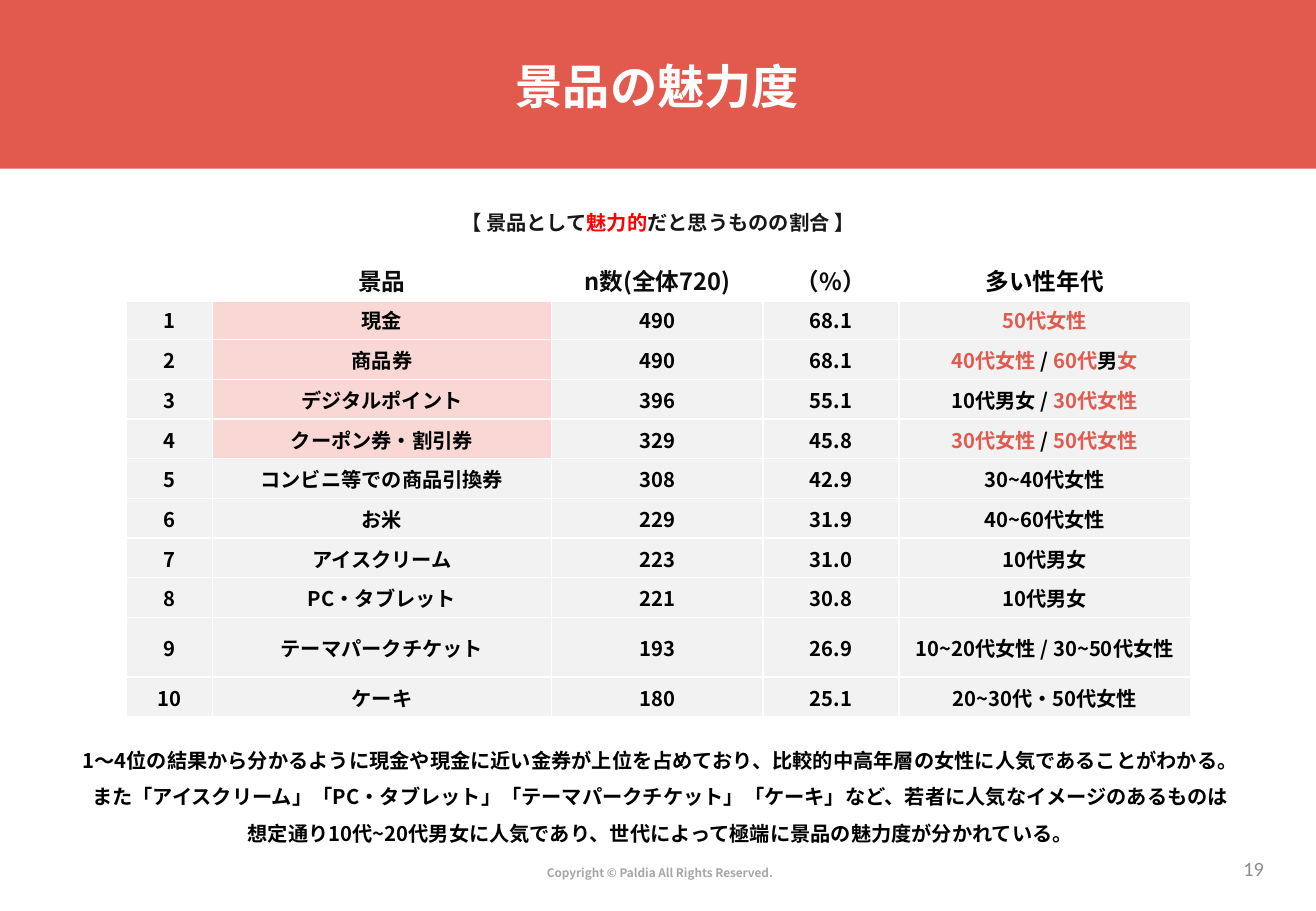
from dataclasses import dataclass

from lxml import etree
from pptx import Presentation
from pptx import util as u
from pptx.dml.color import RGBColor
from pptx.enum import shapes, text
from pptx.oxml import ns


@dataclass(frozen=True)
class Theme:
    font: str = "Noto Sans CJK JP"
    number_font: str = "Calibri"
    coral: str = "E25A4E"
    pink: str = "F8D7D4"
    grey: str = "F2F2F2"
    white: str = "FFFFFF"
    black: str = "000000"
    ink: str = "0D0D0D"
    caption: str = "181717"
    red: str = "FF0000"
    footer: str = "A6A6A6"
    number: str = "8C8C8C"
    title_size: float = 28
    header_size: float = 14
    body_size: float = 12
    footer_size: float = 7


CENTER = text.PP_ALIGN.CENTER
MIDDLE = text.MSO_ANCHOR.MIDDLE
GROW = text.MSO_AUTO_SIZE.SHAPE_TO_FIT_TEXT

HEADER = ["", "景品", "n数(全体720)", "（%）", "|多い性年代"]
PRIZES = [
    ("現金", "490", "68.1", "|50代女性"),
    ("商品券", "490", "68.1", "|40代女性 |/ |60代|男|女"),
    ("デジタルポイント", "396", "55.1", "10代男女 / |30代女性"),
    ("クーポン券・割引券", "329", "45.8", "|30代女性 |/ |50代女性"),
    ("コンビニ等での商品引換券", "308", "42.9", "30~40代女性"),
    ("お米", "229", "31.9", "40~60代女性"),
    ("アイスクリーム", "223", "31.0", "10代男女"),
    ("PC・タブレット", "221", "30.8", "10代男女"),
    ("テーマパークチケット", "193", "26.9", "10~20代女性 / 30~50代女性"),
    ("ケーキ", "180", "25.1", "20~30代・50代女性"),
]
TOP_RANKS = 4
TALL_ROW = 9
COLUMN_WIDTHS = [1.8, 7.09, 4.42, 2.84, 6.1]
ROW_HEIGHT = 0.83
TALL_HEIGHT = 1.25
FINDINGS = [
    "1～4位の結果から分かるように現金や現金に近い金券が上位を占めており、比較的中高年層の女性に人気であることがわかる。",
    "また「アイスクリーム」「PC・タブレット」「テーマパークチケット」「ケーキ」など、若者に人気なイメージのあるものは",
    "想定通り10代~20代男女に人気であり、世代によって極端に景品の魅力度が分かれている。",
]


def apply(target, formats):
    for name, value in formats.items():
        setattr(target, name, value)


class SlideBuilder:
    def __init__(self, page, theme):
        self.page = page
        self.theme = theme

    def band(self, left, top, width, height, color):
        band = self.page.shapes.add_shape(
            shapes.MSO_SHAPE.RECTANGLE, *map(u.Cm, (left, top, width, height)))
        band.shadow.inherit = False
        band.fill.solid()
        band.fill.fore_color.rgb = RGBColor.from_string(color)
        band.line.fill.background()

    def spans(self, para, content, size, color, accent=None, font=None, bold=True):
        font = font or self.theme.font
        for index, piece in enumerate(content.split("|")):
            if not piece:
                continue
            span = para.add_run()
            span.text = piece
            apply(span.font, {"size": u.Pt(size), "bold": bold, "name": font})
            span.font.color.rgb = RGBColor.from_string(accent if index % 2 else color)
            properties = span._r.get_or_add_rPr()
            etree.SubElement(properties, ns.qn("a:ea"), typeface=font)

    def text(self, bounds, lines, size, color, align=CENTER, spacing=None,
             frame_formats=None, **style):
        box = self.page.shapes.add_textbox(*map(u.Cm, bounds))
        frame = box.text_frame
        apply(frame, {"word_wrap": True, **(frame_formats or {})})
        for index, line in enumerate(lines):
            para = frame.add_paragraph() if index else frame.paragraphs[0]
            apply(para, {"alignment": align, "line_spacing": spacing})
            self.spans(para, line, size, color, **style)

    def borders(self, cell, bottom):
        properties = cell._tc.get_or_add_tcPr()
        for side, width in {"L": 1, "R": 1, "T": 1, "B": bottom}.items():
            line = etree.SubElement(properties, ns.qn(f"a:ln{side}"), w=str(u.Pt(width)))
            fill = etree.SubElement(line, ns.qn("a:solidFill"))
            etree.SubElement(fill, ns.qn("a:srgbClr"), val=self.theme.white)

    def cell(self, cell, content, fill, size, color, accent, bottom=1):
        apply(cell, {"vertical_anchor": MIDDLE, "margin_top": u.Cm(0.02),
                     "margin_bottom": 0})
        self.borders(cell, bottom)
        cell.fill.solid()
        cell.fill.fore_color.rgb = RGBColor.from_string(fill)
        para = cell.text_frame.paragraphs[0]
        para.alignment = CENTER
        para.font.size = u.Pt(size)
        self.spans(para, content, size, color, accent)

    def ranking(self, left, top):
        theme = self.theme
        heights = [ROW_HEIGHT] * (len(PRIZES) + 1)
        heights[TALL_ROW] = TALL_HEIGHT
        table = self.page.shapes.add_table(
            len(heights), len(COLUMN_WIDTHS), u.Cm(left), u.Cm(top),
            u.Cm(sum(COLUMN_WIDTHS)), u.Cm(sum(heights))).table
        apply(table, {"first_row": False, "horz_banding": False})
        for column, width in zip(table.columns, COLUMN_WIDTHS):
            column.width = u.Cm(width)
        for row, height in zip(table.rows, heights):
            row.height = u.Cm(height)
        for column, label in enumerate(HEADER):
            self.cell(table.cell(0, column), label, theme.white,
                      theme.header_size, theme.ink, theme.black, bottom=3)
        for rank, prize in enumerate(PRIZES, 1):
            for column, content in enumerate((str(rank), *prize)):
                top_prize = column == 1 and rank <= TOP_RANKS
                self.cell(table.cell(rank, column), content,
                          theme.pink if top_prize else theme.grey,
                          theme.body_size, theme.black, theme.coral)


def main():
    theme = Theme()
    deck = Presentation()
    apply(deck, {"slide_width": u.Cm(27.51), "slide_height": u.Cm(19.05)})
    builder = SlideBuilder(deck.slides.add_slide(deck.slide_layouts[6]), theme)

    builder.band(0, 0, 27.51, 3.53, theme.coral)
    builder.text((6.91, 17.98, 13.77, 0.56), ["Copyright © Paldia All Rights Reserved."],
                 theme.footer_size, theme.footer, frame_formats={"auto_size": GROW})
    builder.text((20.47, 17.65, 6.2, 1.02), ["19"], theme.body_size, theme.number,
                 align=text.PP_ALIGN.RIGHT, font=theme.number_font, bold=False,
                 frame_formats={"vertical_anchor": MIDDLE})
    builder.text((2.77, 4.01, 21.97, 0.97), ["【 景品として|魅力的|だと思うものの割合 】"],
                 theme.body_size, theme.caption, accent=theme.red, spacing=1.5,
                 frame_formats={"auto_size": GROW})
    builder.ranking(2.64, 5.44)
    builder.text((0.97, 15.27, 25.68, 2.49), FINDINGS, theme.body_size, theme.black,
                 spacing=1.5, frame_formats={"auto_size": GROW})
    builder.text((1.88, 0.79, 23.72, 2.13), ["景品の魅力度"], theme.title_size, theme.white,
                 spacing=0.9, frame_formats={"vertical_anchor": MIDDLE})
    deck.save("out.pptx")


if __name__ == "__main__":
    main()
